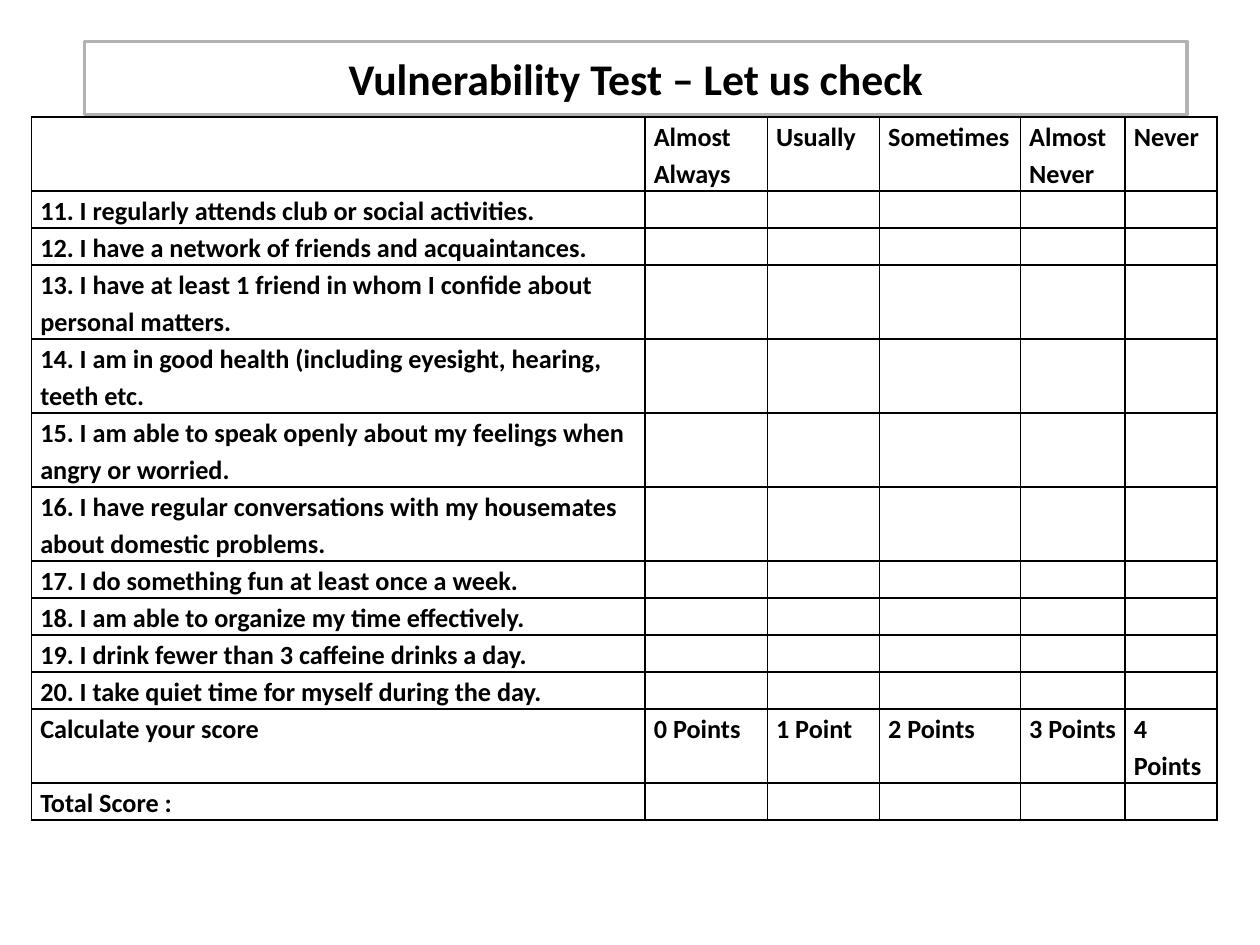
import pptx
import pptx.util
import pptx.dml.color
import pptx.enum.shapes
import pptx.enum.text
import pptx.oxml
import pptx.oxml.ns
from lxml import etree

Inches = pptx.util.Inches
Pt = pptx.util.Pt

FONT = "Calibri"
TEXT_SIZE = 15
COLORS = {"paper": "FFFFFF", "ink": "000000", "frame": "B2B2B2"}

STATEMENTS = [
    "11. I regularly attends club or social activities.",
    "12. I have a network of friends and acquaintances.",
    "13. I have at least 1 friend in whom I confide about personal matters.",
    "14. I am in good health (including eyesight, hearing, teeth etc.",
    "15. I am able to speak openly about my feelings when angry or worried.",
    "16. I have regular conversations with my housemates about domestic problems.",
    "17. I do something fun at least once a week.",
    "18. I am able to organize my time effectively.",
    "19. I drink fewer than 3 caffeine drinks a day.",
    "20. I take quiet time for myself during the day.",
]
BLANKS = [""] * 5
QUESTIONNAIRE = [
    ["", "Almost Always", "Usually", "Sometimes", "Almost Never", "Never"],
    *[[statement, *BLANKS] for statement in STATEMENTS],
    ["Calculate your score", "0 Points", "1 Point", "2 Points", "3 Points", "4 Points"],
    ["Total Score :", *BLANKS],
]
COLUMN_WIDTHS = [4.87, 0.97, 0.89, 1.12, 0.83, 0.73]
HEADER_HEIGHT, ROW_HEIGHT = 0.38, 0.29


def color(name):
    return pptx.dml.color.RGBColor.from_string(COLORS[name])


def add_bold_run(paragraph, text, size):
    run = paragraph.add_run()
    run.text = text
    run.font.name = FONT
    run.font.size = Pt(size)
    run.font.bold = True
    run.font.color.rgb = color("ink")


def add_borders(cell):
    properties = cell._tc.get_or_add_tcPr()
    for position, side in enumerate(("lnL", "lnR", "lnT", "lnB")):
        border = pptx.oxml.parse_xml(
            f'<a:{side} {pptx.oxml.ns.nsdecls("a")} w="{Pt(1)}"><a:solidFill>'
            f'<a:srgbClr val="{COLORS["ink"]}"/></a:solidFill></a:{side}>'
        )
        properties.insert(position, border)


def fill_cell(cell, text):
    cell.margin_left = cell.margin_right = Inches(0.07)
    cell.margin_top = cell.margin_bottom = 0
    cell.fill.background()
    add_borders(cell)
    paragraph = cell.text_frame.paragraphs[0]
    paragraph.line_spacing = 1.15
    if text:
        add_bold_run(paragraph, text, TEXT_SIZE)
    else:
        # An empty cell takes its line height from the end-of-paragraph size.
        etree.SubElement(paragraph._p, pptx.oxml.ns.qn("a:endParaRPr"),
                         sz=str(TEXT_SIZE * 100))


def add_questionnaire(slide, left, top):
    heights = [HEADER_HEIGHT] + [ROW_HEIGHT] * (len(QUESTIONNAIRE) - 1)
    table = slide.shapes.add_table(
        len(heights), len(COLUMN_WIDTHS), Inches(left), Inches(top),
        Inches(sum(COLUMN_WIDTHS)), Inches(sum(heights)),
    ).table
    table.first_row = table.horz_banding = False
    for column, width in zip(table.columns, COLUMN_WIDTHS):
        column.width = Inches(width)
    for row, height, texts in zip(table.rows, heights, QUESTIONNAIRE):
        row.height = Inches(height)
        for cell, text in zip(row.cells, texts):
            fill_cell(cell, text)


def add_title(slide, left, top, width, height):
    title = slide.shapes.add_shape(
        pptx.enum.shapes.MSO_SHAPE.RECTANGLE,
        Inches(left), Inches(top), Inches(width), Inches(height),
    )
    title.shadow.inherit = False
    title.fill.solid()
    title.fill.fore_color.rgb = color("paper")
    title.line.color.rgb = color("frame")
    title.line.width = Pt(2)
    frame = title.text_frame
    frame.word_wrap = True
    frame.vertical_anchor = pptx.enum.text.MSO_ANCHOR.MIDDLE
    paragraph = frame.paragraphs[0]
    paragraph.alignment = pptx.enum.text.PP_ALIGN.CENTER
    add_bold_run(paragraph, "Vulnerability Test – Let us check", 25)


def main():
    deck = pptx.Presentation()
    deck.slide_width, deck.slide_height = Inches(10), Inches(7.5)
    slide = deck.slides.add_slide(deck.slide_layouts[6])
    add_questionnaire(slide, 0.25, 0.93)
    add_title(slide, 0.67, 0.33, 8.75, 0.58)
    deck.save("out.pptx")


if __name__ == "__main__":
    main()
